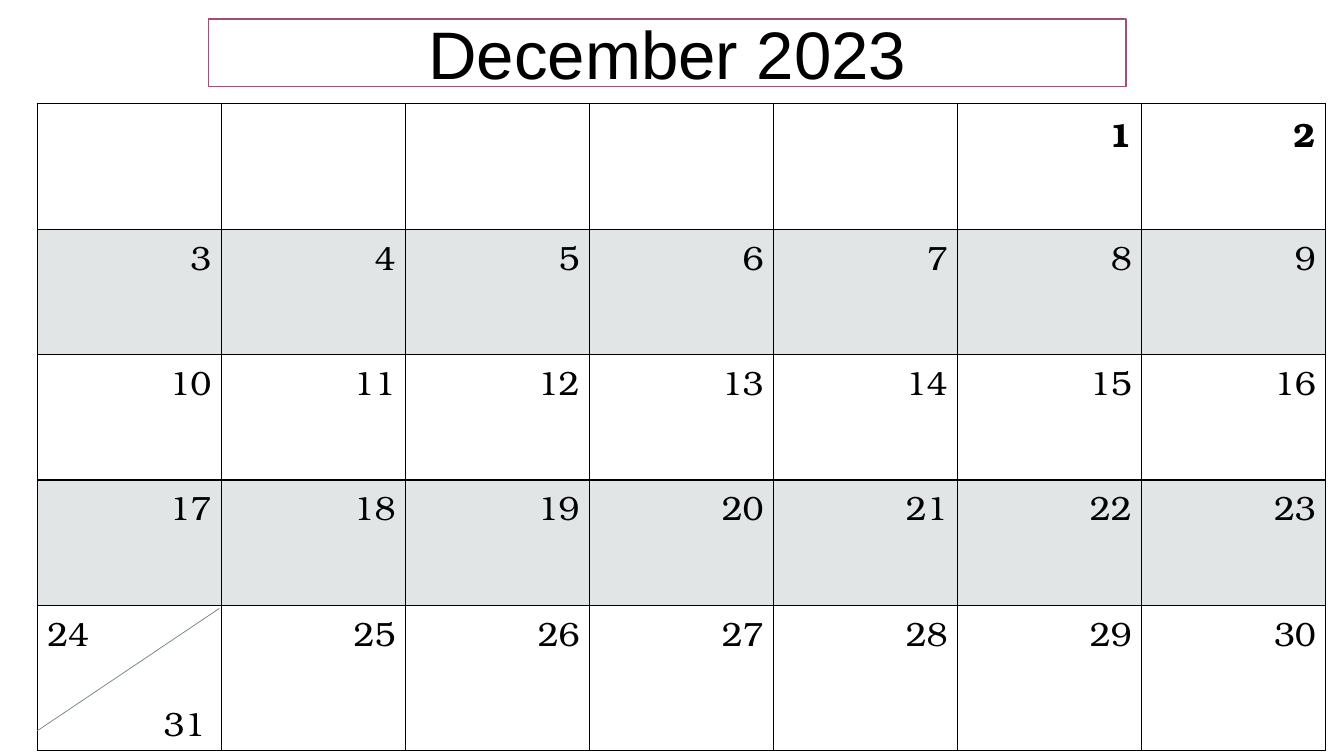
from lxml.etree import SubElement
from pptx import Presentation
from pptx.dml.color import RGBColor
from pptx.enum.shapes import MSO_CONNECTOR
from pptx.enum.text import MSO_ANCHOR, MSO_AUTO_SIZE, PP_ALIGN
from pptx.oxml import parse_xml
from pptx.oxml.ns import nsdecls, qn
from pptx.util import Inches, Pt

BLACK = RGBColor(0, 0, 0)
WHITE = RGBColor(0xFF, 0xFF, 0xFF)
PLUM = RGBColor(0xA5, 0x4D, 0x74)
SLATE = RGBColor(0x6F, 0x81, 0x83)
COLS, ROWS = 7, 5
START = 5  # column of the first day


def write(para, text, size=24, face="TeX Gyre Bonum", bold=False,
          align=PP_ALIGN.RIGHT, before=0):
    para.alignment = align
    para.space_before = Pt(before)
    run = para.add_run()
    run.text = text
    font = run.font
    font.size, font.name, font.bold = Pt(size), face, bold
    font.color.rgb = BLACK


def add_title(slide, text, left, top, width, height):
    title = slide.shapes.title
    title.left, title.top = Inches(left), Inches(top)
    title.width, title.height = Inches(width), Inches(height)
    title._element.spPr.append(parse_xml(
        f'<a:prstGeom {nsdecls("a")} prst="roundRect"><a:avLst/></a:prstGeom>'))
    title.fill.solid()
    title.fill.fore_color.rgb = WHITE
    title.line.color.rgb = PLUM
    title.line.width = Pt(1)
    frame = title.text_frame
    frame.auto_size = MSO_AUTO_SIZE.NONE
    frame.vertical_anchor = MSO_ANCHOR.MIDDLE
    write(frame.paragraphs[0], text, size=48, face="Arial",
          align=PP_ALIGN.CENTER)


def style_cell(cell, shaded):
    """Fill the cell and give it a thin black border."""
    if shaded:
        cell.fill.solid()
        cell.fill.fore_color.rgb = SLATE
        color = cell._tc.tcPr.find(f".//{qn('a:srgbClr')}")
        SubElement(color, qn("a:alpha"), val="20000")
    else:
        cell.fill.background()
    for spot, side in enumerate("LRTB"):
        cell._tc.tcPr.insert(spot, parse_xml(
            f'<a:ln{side} {nsdecls("a")} w="12700"><a:solidFill>'
            f'<a:srgbClr val="{BLACK}"/></a:solidFill></a:ln{side}>'))


def add_month(slide, left, top, width, height):
    table = slide.shapes.add_table(
        ROWS, COLS, Inches(left), Inches(top),
        Inches(width), Inches(height)).table
    table.first_row = table.horz_banding = False
    for row in range(ROWS):
        for col in range(COLS):
            cell = table.cell(row, col)
            style_cell(cell, row % 2 == 1)
            day = row * COLS + col - START + 1
            para = cell.text_frame.paragraphs[0]
            if day == 24:
                cell.margin_right = Inches(0.16)
                write(para, "24", align=PP_ALIGN.LEFT)
                write(cell.text_frame.add_paragraph(), "31", before=32)
            elif day > 0:
                write(para, str(day), bold=row == 0)
    # The split cell for days 24 and 31 is the first one of the last row.
    wide, high = width / COLS, height / ROWS
    base = top + height
    slash = slide.shapes.add_connector(
        MSO_CONNECTOR.STRAIGHT, Inches(left), Inches(base),
        Inches(left + wide - 0.02), Inches(base - high + 0.03))
    slash.line.color.rgb = SLATE
    slash.line.width = Pt(0.5)
    SubElement(slash._element.spPr, qn("a:effectLst"))


def main():
    deck = Presentation()
    deck.slide_width, deck.slide_height = Inches(13.33), Inches(7.5)
    slide = deck.slides.add_slide(deck.slide_layouts[5])
    add_month(slide, 0.37, 1.03, 12.78, 6.22)
    add_title(slide, "December 2023", 2.07, 0.19, 9.1, 0.67)
    deck.save("out.pptx")


if __name__ == "__main__":
    main()
